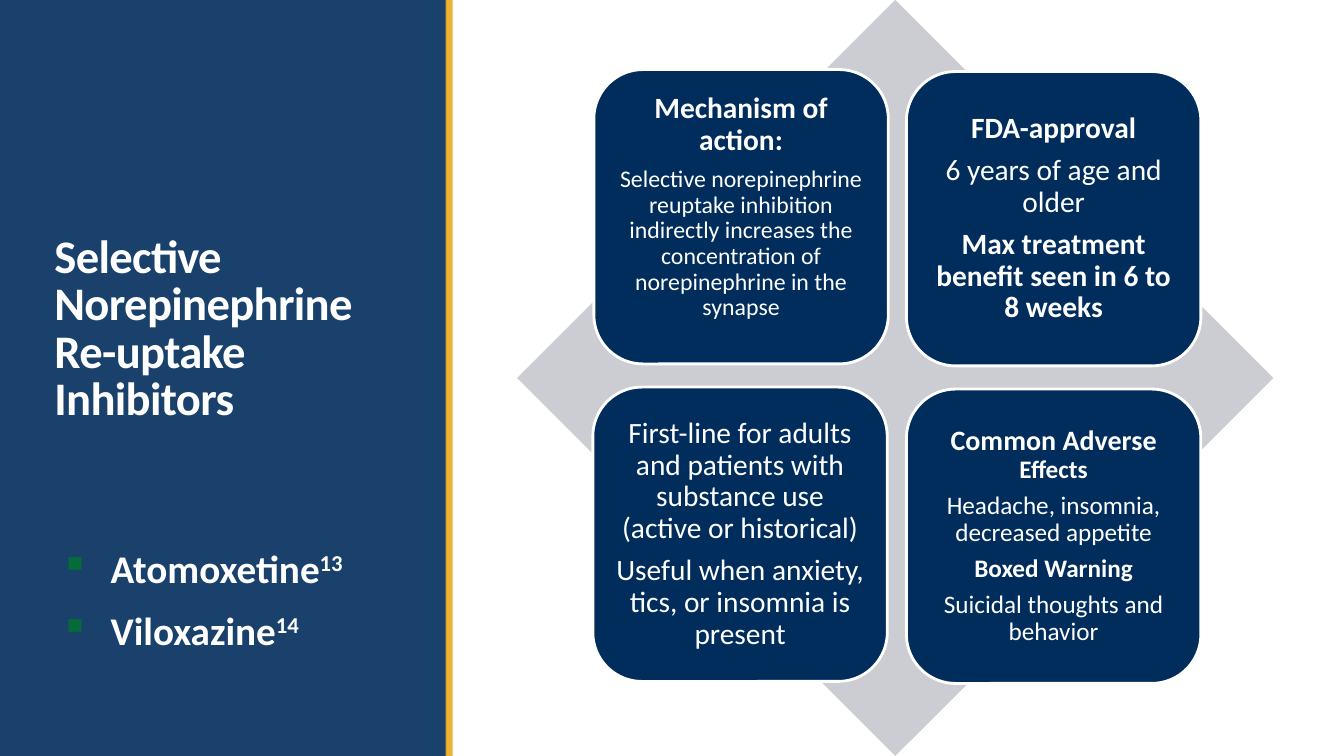
import pptx
import pptx.util
import pptx.dml.color
import pptx.enum.shapes
import pptx.enum.text
import pptx.oxml.ns
from lxml import etree
from dataclasses import dataclass

Inches, Pt = pptx.util.Inches, pptx.util.Pt
SHAPE = pptx.enum.shapes.MSO_SHAPE
ANCHOR = pptx.enum.text.MSO_ANCHOR
ALIGN = pptx.enum.text.PP_ALIGN
qn = pptx.oxml.ns.qn


@dataclass(frozen=True)
class Theme:
    font: str = "Calibri"
    navy: str = "002D5B"
    gold: str = "E9AA21"
    gray: str = "CCCDD2"
    white: str = "FFFFFF"
    green: str = "056B38"
    title: float = 33.3
    drug: float = 28
    large: float = 21
    heading: float = 20
    medium: float = 18
    small: float = 17


def rgb(value):
    return pptx.dml.color.RGBColor.from_string(value)


def apply(obj, values):
    for name, value in values.items():
        setattr(obj, name, value)


class SlideBuilder:
    def __init__(self, s, theme):
        self.s, self.theme = s, theme

    def shape(self, kind, box, color, alpha=None, outline=None):
        sp = self.s.shapes.add_shape(kind, *map(Inches, box))
        sp.shadow.inherit = False
        sp.fill.solid()
        sp.fill.fore_color.rgb = rgb(color)
        if alpha:
            clr = sp.fill._xPr.find(".//" + qn("a:srgbClr"))
            etree.SubElement(clr, qn("a:alpha"), val=str(alpha * 1000))
        if outline:
            sp.line.color.rgb = rgb(outline)
            sp.line.width = Pt(2)
        else:
            sp.line.fill.background()
        return sp

    def run(self, p, text, size, bold=True, **attributes):
        r = p.add_run()
        r.text = text
        apply(r.font, {"name": self.theme.font, "size": Pt(size), "bold": bold})
        r.font.color.rgb = rgb(self.theme.white)
        for name, value in attributes.items():
            r.font._element.set(name, value)

    def frame(self, tf, anchor, **margins):
        apply(tf, {"word_wrap": True, "vertical_anchor": anchor,
                   "auto_size": pptx.enum.text.MSO_AUTO_SIZE.NONE})
        apply(tf, {f"margin_{side}": Inches(v) for side, v in margins.items()})

    def paragraphs(self, tf, items):
        for i, item in enumerate(items):
            yield tf.paragraphs[0] if i == 0 else tf.add_paragraph(), item

    def title(self, text, box):
        sp = self.s.shapes.title
        apply(sp, dict(zip(("left", "top", "width", "height"), map(Inches, box))))
        self.frame(sp.text_frame, ANCHOR.BOTTOM, left=0.1, right=0.1, top=0.05, bottom=0.53)
        p = sp.text_frame.paragraphs[0]
        apply(p, {"alignment": ALIGN.LEFT, "line_spacing": 0.85})
        self.run(p, text, self.theme.title, spc="-50")

    def bullets(self, items, box):
        tf = self.s.shapes.add_textbox(*map(Inches, box)).text_frame
        self.frame(tf, ANCHOR.TOP)
        for p, (name, reference) in self.paragraphs(tf, items):
            pPr = p._p.get_or_add_pPr()
            pPr.set("marL", str(Inches(0.5)))
            pPr.set("indent", str(Inches(-0.5)))
            color = etree.SubElement(pPr, qn("a:buClr"))
            etree.SubElement(color, qn("a:srgbClr"), val=self.theme.green)
            etree.SubElement(pPr, qn("a:buChar"), char="▪")
            apply(p, {"line_spacing": 0.9, "space_after": Pt(2),
                      "space_before": Pt(0 if p._p is tf.paragraphs[0]._p else 12)})
            self.run(p, name, self.theme.drug)
            self.run(p, reference, self.theme.drug, baseline="30000")

    def card(self, left, top, anchor, paragraphs):
        sp = self.shape(SHAPE.ROUNDED_RECTANGLE, (left, top, 2.92, 2.92),
                        self.theme.navy, outline=self.theme.white)
        self.frame(sp.text_frame, anchor, left=0.09, right=0.09, top=0.09, bottom=0.09)
        for p, runs in self.paragraphs(sp.text_frame, paragraphs):
            apply(p, {"alignment": ALIGN.CENTER, "line_spacing": 0.9,
                      "space_after": Pt(round(0.35 * runs[-1][1], 1))})
            for r in runs:
                self.run(p, *r)


def main():
    theme = Theme()
    prs = pptx.Presentation()
    prs.slide_width, prs.slide_height = Inches(13.33), Inches(7.5)
    slide = SlideBuilder(prs.slides.add_slide(prs.slide_layouts[5]), theme)

    # Left panel
    slide.shape(SHAPE.RECTANGLE, (0, 0, 4.43, 7.5), theme.navy, alpha=90)
    slide.shape(SHAPE.RECTANGLE, (4.42, 0, 0.07, 7.5), theme.gold, alpha=90)
    # Keep the title above the panel
    tree = slide.s.shapes._spTree
    tree.append(slide.s.shapes.title._element)
    slide.title("Selective Norepinephrine Re-uptake Inhibitors", (0.44, 2.25, 3.5, 2.5))
    slide.bullets([("Atomoxetine", "13"), ("Viloxazine", "14")], (0.5, 5.4, 3.5, 1.18))

    # Diamond with four cards
    slide.shape(SHAPE.DIAMOND, (5.13, 0, 7.5, 7.5), theme.gray)
    large, medium = theme.large, theme.medium
    cards = [
        (5.88, 3.84, ANCHOR.MIDDLE, [
            [("First-line for adults and patients with substance use "
              "(active or historical)", large, False)],
            [("Useful when anxiety, tics, or insomnia is present", large, False)]]),
        (8.99, 0.71, ANCHOR.MIDDLE, [
            [("FDA-approval", large)],
            [("6 years of age and older", large, False)],
            [("Max treatment benefit seen in 6 to 8 weeks", large)]]),
        (5.89, 0.69, ANCHOR.TOP, [
            [("Mechanism of action:", large)],
            [("Selective norepinephrine reuptake inhibition indirectly increases "
              "the concentration of norepinephrine in the synapse", theme.small, False)]]),
        (8.99, 3.86, ANCHOR.MIDDLE, [
            [("Common Adverse ", theme.heading), ("Effects", medium)],
            [("Headache, insomnia, decreased appetite", medium, False)],
            [("Boxed Warning", medium)],
            [("Suicidal thoughts and behavior", medium, False)]]),
    ]
    for card in cards:
        slide.card(*card)

    prs.save("out.pptx")


if __name__ == "__main__":
    main()
